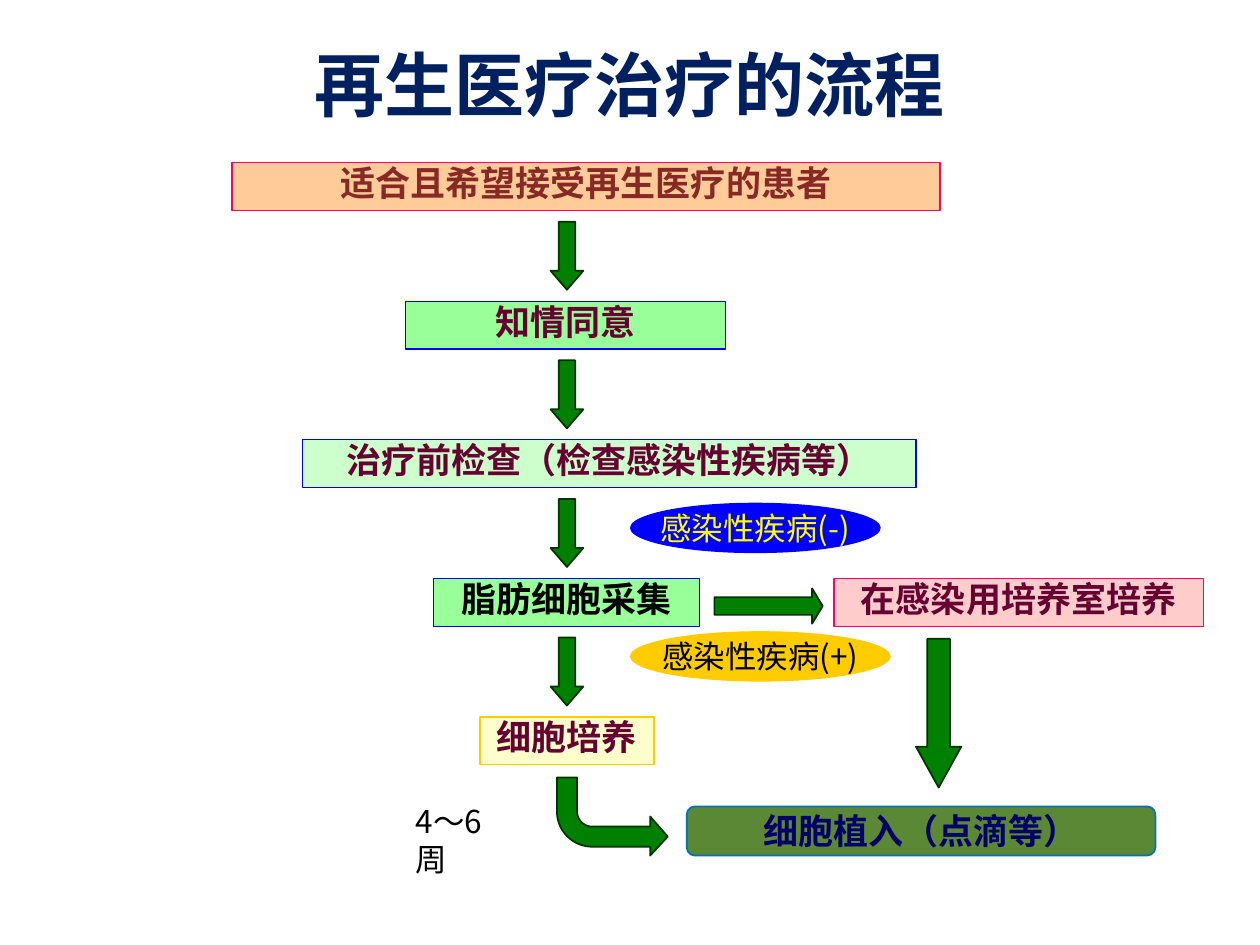
import math
import pptx
import pptx.dml.color
import pptx.enum.shapes
import pptx.enum.text
import pptx.oxml
import pptx.oxml.ns
import pptx.util

Inches = pptx.util.Inches
Pt = pptx.util.Pt
SHAPE = pptx.enum.shapes.MSO_SHAPE
ALIGN = pptx.enum.text.PP_ALIGN
ANCHOR = pptx.enum.text.MSO_ANCHOR

COLORS = {
    "navy": "002060", "ink": "000068", "wine": "660033", "brown": "872925",
    "black": "000000", "yellow": "FFFF00", "blue": "0000FE", "pink": "FF0066",
    "gold": "FFCC00", "sky": "0070C0", "orange_fill": "FFCC99",
    "green_fill": "99FF99", "mint_fill": "CCFFCC", "cream_fill": "FFFFCC",
    "rose_fill": "FFCCCC", "olive": "5B8835", "arrow": "008000",
    "arrow_edge": "003300",
}


class FlowSlide:
    font = "Noto Sans CJK SC"
    box_height = 0.38

    def __init__(self, slide):
        self.slide = slide

    def color(self, name):
        return pptx.dml.color.RGBColor.from_string(COLORS[name])

    def paint(self, sp, fill, line=None, width=1):
        sp.shadow.inherit = False
        sp.fill.solid()
        sp.fill.fore_color.rgb = self.color(fill)
        if line:
            sp.line.color.rgb = self.color(line)
            sp.line.width = Pt(width)
        else:
            sp.line.fill.background()

    def set_text(self, sp, text, size, color, bold=False, align=ALIGN.CENTER,
                 anchor=ANCHOR.MIDDLE, wrap=True):
        tf = sp.text_frame
        tf.word_wrap = wrap
        tf.vertical_anchor = anchor
        tf.text = text
        p = tf.paragraphs[0]
        p.alignment = align
        r = p.runs[0]
        r.font.size = Pt(size)
        r.font.bold = bold
        r.font.color.rgb = self.color(color)
        r.font.name = self.font
        ea = pptx.oxml.parse_xml(
            f'<a:ea {pptx.oxml.ns.nsdecls("a")} typeface="{self.font}"/>')
        r.font._element.append(ea)
        return tf

    def shape(self, kind, x, y, w, h):
        return self.slide.shapes.add_shape(
            kind, Inches(x), Inches(y), Inches(w), Inches(h))

    def label(self, text, x, y, w, h, size, color, **style):
        sp = self.slide.shapes.add_textbox(
            Inches(x), Inches(y), Inches(w), Inches(h))
        self.set_text(sp, text, size, color, anchor=ANCHOR.TOP, **style)

    def step(self, text, x, y, w, fill, line, color):
        sp = self.shape(SHAPE.RECTANGLE, x, y, w, self.box_height)
        self.paint(sp, fill, line, 0.75)
        tf = self.set_text(sp, text, 20, color, bold=True)
        tf.margin_top = tf.margin_bottom = Inches(0.03)
        tf.paragraphs[0].line_spacing = 0.8

    def final_step(self, text, x, y, w, h):
        sp = self.shape(SHAPE.ROUNDED_RECTANGLE, x, y, w, h)
        self.paint(sp, "olive", "sky")
        self.set_text(sp, text, 20, "ink", bold=True)

    def result(self, text, x, y, w, fill, color):
        sp = self.shape(SHAPE.OVAL, x, y, w, 0.4)
        self.paint(sp, fill)
        self.set_text(sp, text, 18, color, wrap=False)

    def arrow(self, kind, x, y, w, h, head):
        sp = self.shape(kind, x, y, w, h)
        sp.adjustments[0] = 0.5
        sp.adjustments[1] = head
        self.paint(sp, "arrow", "arrow_edge")

    def bent_arrow(self, x, y):
        """Draw an arrow that goes down, turns a round corner and points right."""
        cx, cy = x + 0.27, y + 0.27
        outer, inner = 0.28, 0.12

        def arc(radius):
            angles = [math.radians(180 - a) for a in range(0, 91, 5)]
            return [(cx + radius * math.cos(a), cy + radius * math.sin(a))
                    for a in angles]

        neck, tip = x + 0.73, x + 0.87
        head = [(neck, cy + outer), (neck, y + 0.62), (tip, y + 0.47),
                (neck, y + 0.31), (neck, cy + inner)]
        points = ([(cx - outer, y)] + arc(outer) + head
                  + arc(inner)[::-1] + [(cx - inner, y)])
        points = [(Inches(px), Inches(py)) for px, py in points]
        builder = self.slide.shapes.build_freeform(*points[0])
        builder.add_line_segments(points[1:], close=True)
        self.paint(builder.convert_to_shape(), "arrow", "arrow_edge")


def main():
    prs = pptx.Presentation()
    prs.slide_width, prs.slide_height = Inches(10), Inches(7.5)
    s = FlowSlide(prs.slides.add_slide(prs.slide_layouts[6]))

    s.label("再生医疗治疗的流程", 0.98, 0.28, 8.03, 0.61, 40, "navy", bold=True)

    steps = [
        ("适合且希望接受再生医疗的患者", 1.84, 5.62, "orange_fill", "pink", "brown"),
        ("知情同意", 3.22, 2.54, "green_fill", "blue", "wine"),
        ("治疗前检查（检查感染性疾病等）", 2.4, 4.87, "mint_fill", "blue", "wine"),
        ("脂肪细胞采集", 3.44, 2.11, "green_fill", "blue", "black"),
        ("细胞培养", 3.81, 1.38, "cream_fill", "gold", "wine"),
    ]
    top, pitch = 1.29, 1.1
    for i, (text, x, w, fill, line, color) in enumerate(steps):
        y = top + i * pitch
        s.step(text, x, y, w, fill, line, color)
        if i < len(steps) - 1:
            s.arrow(SHAPE.DOWN_ARROW, 4.37, y + 0.47, 0.26, 0.54, 0.58)

    s.step("在感染用培养室培养", 6.62, top + 3 * pitch, 2.93,
           "rose_fill", "pink", "wine")
    s.arrow(SHAPE.RIGHT_ARROW, 5.67, 4.67, 0.86, 0.28, 0.3)
    s.arrow(SHAPE.DOWN_ARROW, 7.27, 5.07, 0.36, 1.18, 0.9)
    s.bent_arrow(4.43, 6.17)
    s.final_step("细胞植入（点滴等）", 5.45, 6.4, 3.72, 0.39)

    s.result("感染性疾病(-)", 5, 3.99, 1.99, "blue", "yellow")
    s.result("感染性疾病(+)", 5, 5.01, 2.07, "gold", "black")
    s.label("4～6周", 3.2, 6.32, 0.95, 0.4, 18, "black", align=ALIGN.LEFT)

    prs.save("out.pptx")


if __name__ == "__main__":
    main()
